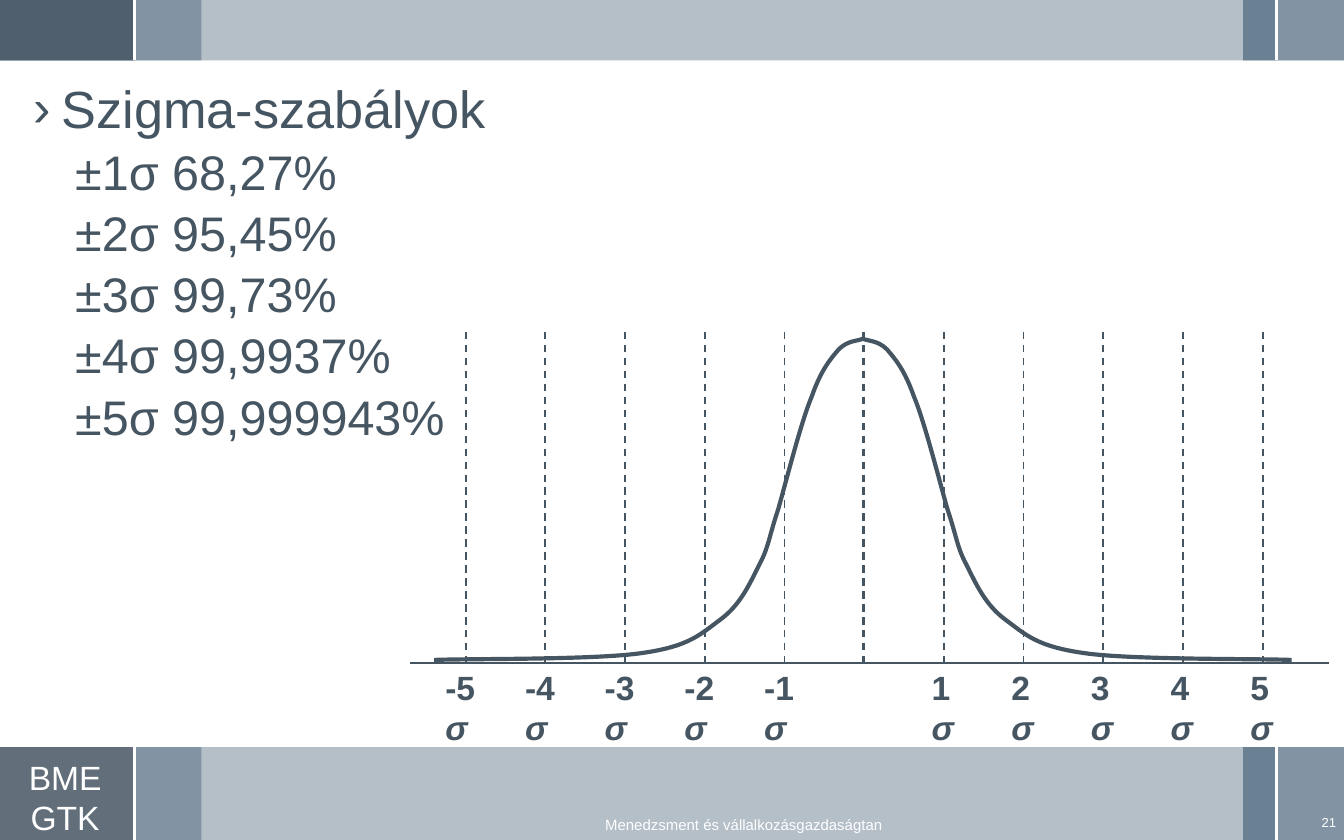
from collections import namedtuple
from lxml.etree import SubElement
from pptx import Presentation
from pptx.dml.color import RGBColor
from pptx.enum.dml import MSO_LINE
from pptx.enum.shapes import MSO_CONNECTOR, MSO_SHAPE
from pptx.enum.text import MSO_ANCHOR, MSO_AUTO_SIZE, PP_ALIGN
from pptx.oxml.ns import qn
from pptx.util import Inches, Pt

Box = namedtuple("Box", "left top width height")
WIDTH, HEIGHT = 10, 6.25
COLUMN = WIDTH / 40
INK, WHITE = "465562", "FFFFFF"
STEEL, MIST, SLATE = "6A8093", "9BAAB7", "475562"
RULES = ["±1σ 68,27%", "±2σ 95,45%", "±3σ 99,73%", "±4σ 99,9937%", "±5σ 99,999943%"]
HALF_CURVE = [
    (3.23, 4.91),
    (3.49, 4.9), (4.42, 4.91), (4.77, 4.86),
    (5.13, 4.81), (5.21, 4.72), (5.36, 4.61),
    (5.51, 4.5), (5.58, 4.34), (5.65, 4.2),
    (5.72, 4.07), (5.72, 4), (5.79, 3.79),
    (5.85, 3.58), (5.96, 3.14), (6.04, 2.95),
    (6.11, 2.75), (6.18, 2.67), (6.24, 2.6),
    (6.31, 2.53), (6.38, 2.54), (6.42, 2.52),
]


def color(hex_string):
    return RGBColor.from_string(hex_string)


def inches(box):
    return [Inches(length) for length in box]


def set_font(font, size, hex_string):
    font.name, font.size = "Arial", Pt(size)
    font.color.rgb = color(hex_string)


def add_rectangle(shapes, box, fill, opacity=100):
    shape = shapes.add_shape(MSO_SHAPE.RECTANGLE, *inches(box))
    shape.shadow.inherit = False
    shape.line.fill.background()
    shape.fill.solid()
    shape.fill.fore_color.rgb = color(fill)
    if opacity < 100:
        fill_color = shape._element.spPr.find(qn("a:solidFill"))[0]
        SubElement(fill_color, qn("a:alpha")).set("val", str(opacity * 1000))


def add_line(shapes, start, end, hex_string, width, dash=None):
    connector = shapes.add_connector(MSO_CONNECTOR.STRAIGHT, *inches(start + end))
    connector.line.color.rgb = color(hex_string)
    connector.line.width = Pt(width)
    if dash:
        connector.line.dash_style = dash
    SubElement(connector._element.spPr, qn("a:effectLst"))


def add_text(shapes, box, lines, size, align, insets=(0.08, 0.04), anchor=MSO_ANCHOR.MIDDLE):
    frame = shapes.add_textbox(*inches(box)).text_frame
    frame.word_wrap = True
    frame.vertical_anchor = anchor
    frame.margin_left = frame.margin_right = Inches(insets[0])
    frame.margin_top = frame.margin_bottom = Inches(insets[1])
    frame.text = "\n".join(lines)
    for paragraph in frame.paragraphs:
        paragraph.alignment = align
        set_font(paragraph.font, size, WHITE)


def add_band(shapes, box, corner):
    def cell(column, span):
        return Box(box.left + column * COLUMN, box.top, span * COLUMN, box.height)

    def divider(column):
        left = box.left + column * COLUMN
        add_line(shapes, (left, box.top), (left, box.top + box.height), WHITE, 1.5)

    add_rectangle(shapes, cell(38, 2), MIST)
    add_rectangle(shapes, cell(37, 1), STEEL)
    add_rectangle(shapes, cell(4, 2), MIST)
    if corner:
        add_rectangle(shapes, cell(0, 4), corner)
    add_rectangle(shapes, box, STEEL, 50)
    divider(38)
    add_rectangle(shapes, cell(0, 4), SLATE, 75)
    divider(4)


def add_footer(shapes, box):
    add_text(shapes, Box(0.08, box.top + 0.07, 0.81, 0.61), ["BME", "GTK"], 18,
             PP_ALIGN.CENTER, (0, 0), MSO_ANCHOR.TOP)
    add_text(shapes, Box(2.39, box.top + 0.5, 6.29, 0.15),
             ["Menedzsment és vállalkozásgazdaságtan"], 8, PP_ALIGN.CENTER)
    add_text(shapes, Box(9.73, box.top + 0.46, 0.29, 0.2), ["21"], 7, PP_ALIGN.RIGHT)


def fill_rules(body, box):
    body.left, body.top, body.width, body.height = inches(box)
    frame = body.text_frame
    frame.auto_size = MSO_AUTO_SIZE.NONE
    frame.vertical_anchor = MSO_ANCHOR.TOP
    frame.margin_left = frame.margin_right = Inches(0.08)
    frame.margin_top = frame.margin_bottom = Inches(0.04)
    frame.text = "\n".join(["Szigma-szabályok"] + RULES)
    for index, paragraph in enumerate(frame.paragraphs):
        heading = index == 0
        paragraph.level = 0 if heading else 1
        paragraph.alignment = PP_ALIGN.LEFT
        paragraph.line_spacing = 0.9
        paragraph.space_before = Pt(10.9 if heading else 4.7)
        set_font(paragraph.font, 28 if heading else 26, INK)
        properties = paragraph._p.get_or_add_pPr()
        properties.set("marL", str(Inches(0.21 if heading else 0.31)))
        properties.set("indent", str(Inches(-0.21 if heading else 0)))
        bullet = properties.makeelement(qn("a:buChar" if heading else "a:buNone"))
        if heading:
            bullet.set("char", "›")
        properties.find(qn("a:defRPr")).addprevious(bullet)


def add_curve(shapes, controls):
    start, *others = [inches(point) for point in controls]
    builder = shapes.build_freeform(*start)
    builder.add_line_segments(others, close=False)
    curve = builder.convert_to_shape()
    curve.shadow.inherit = False
    curve.fill.background()
    curve.line.color.rgb = color(INK)
    curve.line.width = Pt(2.25)
    segments = list(curve._element.iter(qn("a:lnTo")))
    outline = segments[0].getparent()
    for first in range(0, len(segments), 3):
        cubic = SubElement(outline, qn("a:cubicBezTo"))
        for segment in segments[first:first + 3]:
            cubic.append(segment[0])
            outline.remove(segment)


def add_sigma_label(shapes, sigma, center, top):
    offset, width = (0.25, 0.49) if sigma < 0 else (0.19, 0.42)
    frame = shapes.add_textbox(*inches((center - offset, top, width, 0.4))).text_frame
    frame.word_wrap = True
    paragraph = frame.paragraphs[0]
    set_font(paragraph.font, 18, INK)
    paragraph.font.bold = True
    paragraph.add_run().text = str(sigma)
    symbol = paragraph.add_run()
    symbol.text = "σ"
    symbol.font.italic = True


def add_bell_diagram(shapes, box):
    peak = HALF_CURVE[-1][0]
    center = peak + 0.01
    spacing = box.width * 0.0867
    baseline = box.top + box.height

    def add_marker(x):
        add_line(shapes, (x, box.top), (x, baseline + 0.02), INK, 1, MSO_LINE.DASH)

    add_line(shapes, (box.left, baseline), (box.left + box.width, baseline), INK, 1)
    add_curve(shapes, HALF_CURVE)
    add_curve(shapes, [(2 * peak - x, y) for x, y in HALF_CURVE])
    add_marker(peak)
    for sigma in range(-5, 6):
        x = center + sigma * spacing
        add_marker(x)
        if sigma:
            add_sigma_label(shapes, sigma, x, baseline - 0.02)


def main():
    presentation = Presentation()
    presentation.slide_width, presentation.slide_height = Inches(WIDTH), Inches(HEIGHT)
    slide = presentation.slides.add_slide(presentation.slide_layouts[1])
    title = slide.shapes.title._element
    title.getparent().remove(title)
    bottom = Box(0, 5.56, WIDTH, HEIGHT - 5.56)
    add_band(slide.shapes, bottom, None)
    add_band(slide.shapes, Box(0, 0, WIDTH, 0.45), STEEL)
    add_footer(slide.shapes, bottom)
    fill_rules(slide.placeholders[1], Box(0.17, 0.58, 9.65, 4.84))
    diagram = slide.shapes.add_group_shape()
    add_bell_diagram(diagram.shapes, Box(3.05, 2.47, 6.84, 2.46))
    presentation.save("out.pptx")


if __name__ == "__main__":
    main()
